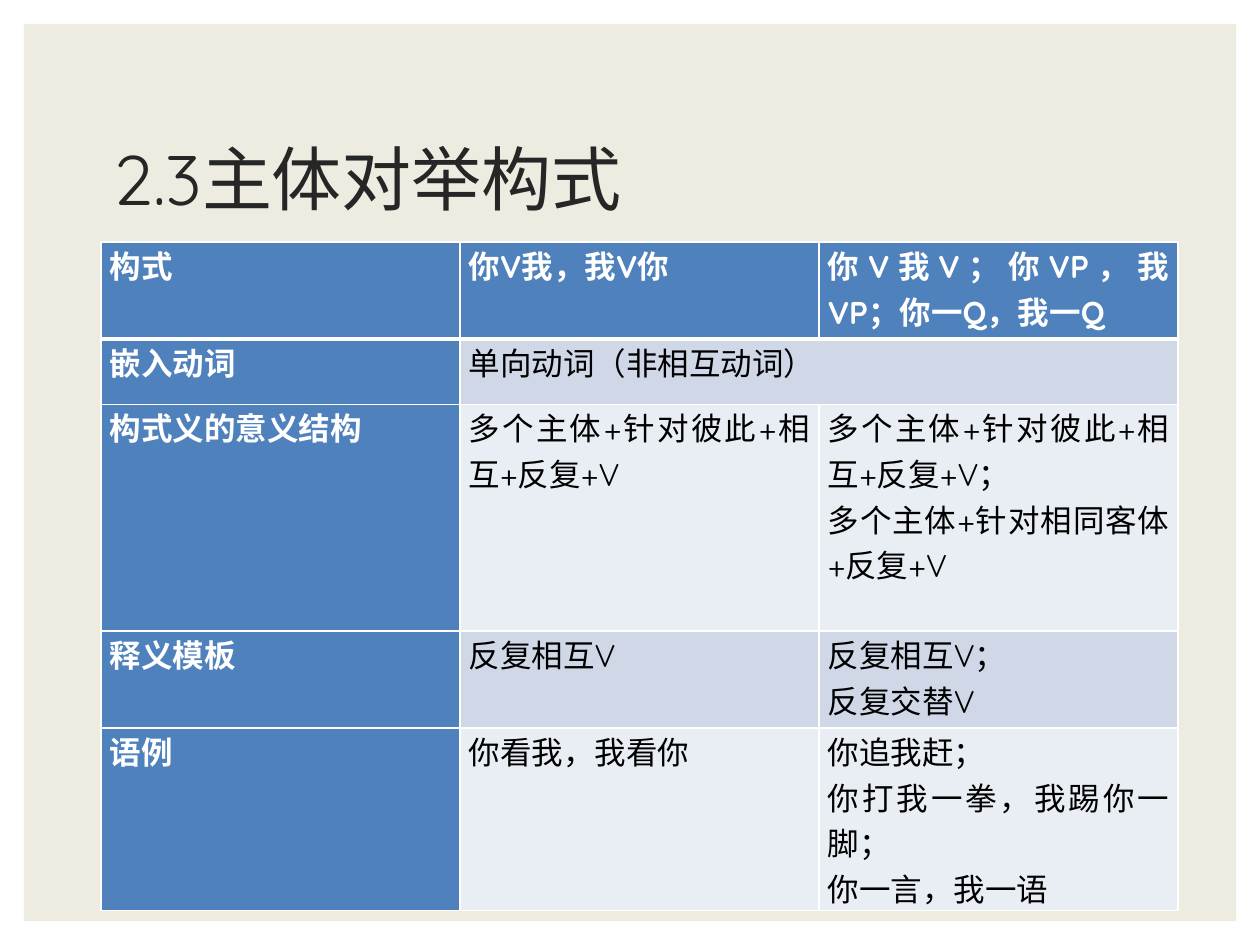
from dataclasses import dataclass

from lxml import etree
from pptx import Presentation
from pptx.dml.color import RGBColor
from pptx.enum.shapes import MSO_SHAPE
from pptx.enum.text import MSO_ANCHOR, PP_ALIGN
from pptx.oxml.ns import qn
from pptx.util import Inches, Pt

RECT = MSO_SHAPE.RECTANGLE
MIDDLE = MSO_ANCHOR.MIDDLE
LEFT = PP_ALIGN.LEFT
JUSTIFY = PP_ALIGN.JUSTIFY
TITLE_ONLY = 5


@dataclass(frozen=True)
class Theme:
    font: str = "Quicksand"
    paper: str = "EEECE1"
    ink: str = "262626"
    head: str = "4F81BD"
    bands: tuple = ("E9EDF4", "D0D8E8")
    white: str = "FFFFFF"
    black: str = "000000"
    title: int = 40
    body: int = 18
    thin: int = 1
    thick: int = 3


ROWS = [
    ["构式", "你V我，我V你", "你V我V；你VP，我VP；你一Q，我一Q"],
    ["嵌入动词", "单向动词（非相互动词）", ""],
    ["构式义的意义结构", "多个主体+针对彼此+相互+反复+V",
     "多个主体+针对彼此+相互+反复+V；\n多个主体+针对相同客体+反复+V"],
    ["释义模板", "反复相互V", "反复相互V；\n反复交替V"],
    ["语例", "你看我，我看你",
     "你追我赶；\n你打我一拳，我踢你一脚；\n你一言，我一语"],
]
HEIGHTS = [0.77, 0.52, 1.8, 0.77, 1.29]
WIDTHS = [2.85] * 3
MERGES = [((1, 1), (1, 2))]


class Deck:
    def __init__(self, theme):
        self.theme = theme
        self.file = Presentation()
        self.file.slide_width = Inches(10)
        self.file.slide_height = Inches(7.5)
        layout = self.file.slide_layouts[TITLE_ONLY]
        self.slide = self.file.slides.add_slide(layout)

    def apply(self, item, values):
        for name, value in values.items():
            setattr(item, name, value)

    def style(self, para, size, color, bold, align):
        para.alignment = align
        for run in para.runs:
            self.apply(run.font, {"name": self.theme.font, "size": Pt(size),
                                  "bold": bold})
            run.font.color.rgb = RGBColor.from_string(color)

    def panel(self, left, top, width, height):
        shape = self.slide.shapes.add_shape(
            RECT, Inches(left), Inches(top), Inches(width), Inches(height))
        shape.shadow.inherit = False
        shape.fill.solid()
        shape.fill.fore_color.rgb = RGBColor.from_string(self.theme.paper)
        shape.line.fill.background()
        tree = shape.element.getparent()
        tree.remove(shape.element)
        tree.insert(2, shape.element)

    def title(self, text, left, top, width, height):
        shape = self.slide.shapes.title
        self.apply(shape, {"left": Inches(left), "top": Inches(top),
                           "width": Inches(width), "height": Inches(height)})
        frame = shape.text_frame
        self.apply(frame, {"text": text, "vertical_anchor": MIDDLE,
                           "word_wrap": True})
        para = frame.paragraphs[0]
        para.line_spacing = 0.9
        self.style(para, self.theme.title, self.theme.ink, False, LEFT)

    def border(self, cell, side, width):
        props = cell._tc.get_or_add_tcPr()
        line = etree.SubElement(props, qn(f"a:ln{side}"), w=str(Pt(width)))
        fill = etree.SubElement(line, qn("a:solidFill"))
        etree.SubElement(fill, qn("a:srgbClr"), val=self.theme.white)

    def cell(self, cell, text, row, col):
        theme = self.theme
        self.apply(cell, {"margin_left": Inches(0.07),
                          "margin_right": Inches(0.07),
                          "margin_top": 0, "margin_bottom": 0})
        for side in "LRTB":
            heavy = (row, side) in ((0, "B"), (1, "T"))
            self.border(cell, side, theme.thick if heavy else theme.thin)
        label = row == 0 or col == 0
        cell.fill.solid()
        cell.fill.fore_color.rgb = RGBColor.from_string(
            theme.head if label else theme.bands[row % 2])
        if text:
            cell.text_frame.text = text
        for para in cell.text_frame.paragraphs:
            self.style(para, theme.body,
                       theme.white if label else theme.black, label, JUSTIFY)

    def table(self, rows, widths, heights, merges, left, top):
        grid = self.slide.shapes.add_table(
            len(rows), len(widths), Inches(left), Inches(top),
            Inches(sum(widths)), Inches(sum(heights))).table
        for col, width in zip(grid.columns, widths):
            col.width = Inches(width)
        for row, height in zip(grid.rows, heights):
            row.height = Inches(height)
        for first, last in merges:
            grid.cell(*first).merge(grid.cell(*last))
        for r, row in enumerate(rows):
            for c, text in enumerate(row):
                self.cell(grid.cell(r, c), text, r, c)


def main():
    deck = Deck(Theme())
    deck.panel(0.19, 0.19, 9.62, 7.12)
    deck.title("2.3主体对举构式", 0.8, 0.7, 8.4, 1.5)
    deck.table(ROWS, WIDTHS, HEIGHTS, MERGES, 0.8, 1.92)
    deck.file.save("out.pptx")


if __name__ == "__main__":
    main()
